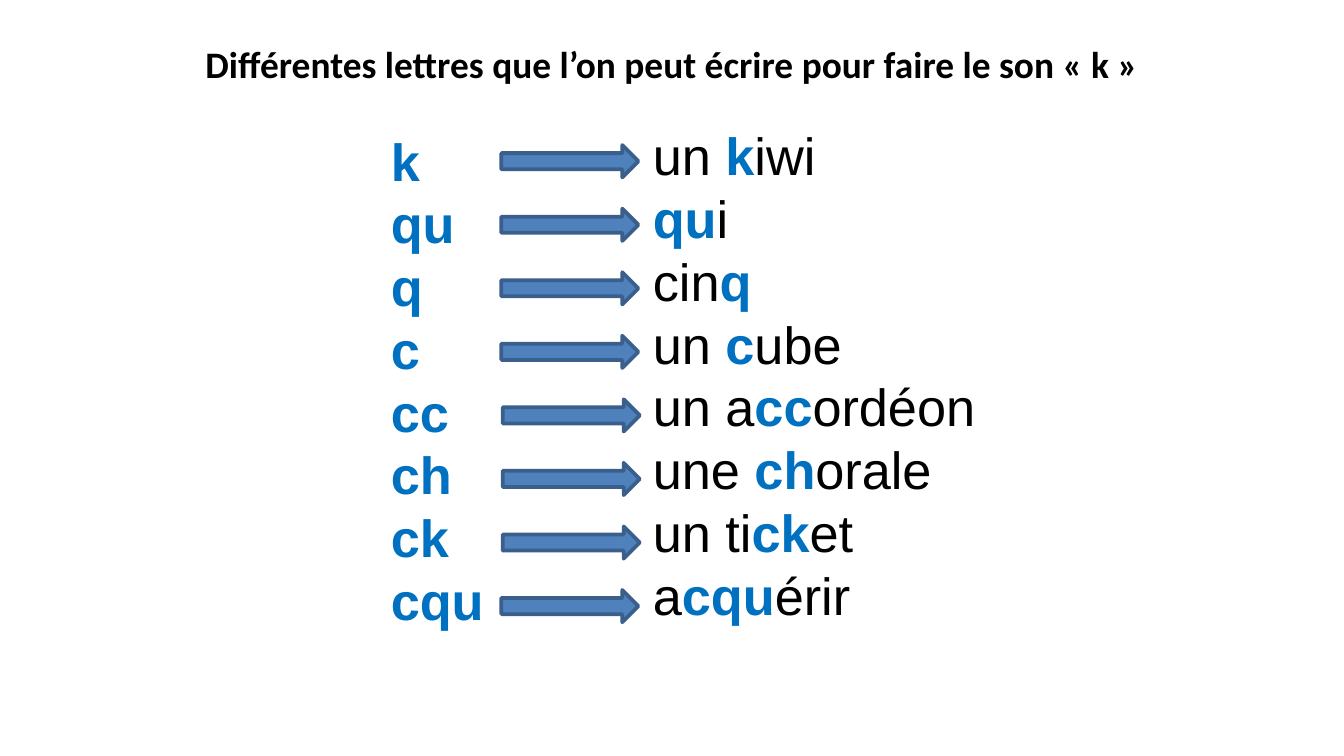
from pptx import Presentation
from pptx.dml.color import RGBColor
from pptx.enum.shapes import MSO_SHAPE
from pptx.enum.text import MSO_ANCHOR, PP_ALIGN
from pptx.util import Inches, Pt

BLACK = RGBColor(0x00, 0x00, 0x00)
LETTER_BLUE = RGBColor(0x00, 0x70, 0xC0)
ARROW_FILL = RGBColor(0x4F, 0x81, 0xBD)
ARROW_LINE = RGBColor(0x3A, 0x5F, 0x8C)

TITLE = "Différentes lettres que l’on peut écrire pour faire le son « k »"
SPELLINGS = [
    ("k", "un kiwi"),
    ("qu", "qui"),
    ("q", "cinq"),
    ("c", "un cube"),
    ("cc", "un accordéon"),
    ("ch", "une chorale"),
    ("ck", "un ticket"),
    ("cqu", "acquérir"),
]
FIRST_ARROW_TOP = 1.08
LAST_ARROW_TOP = 4.39
ARROW_PITCH = (LAST_ARROW_TOP - FIRST_ARROW_TOP) / (len(SPELLINGS) - 1)


class SpellingSlide:
    title = {"name": "Calibri", "size": Pt(20), "bold": True}
    plain = {"name": "Arial", "size": Pt(28), "bold": False}
    letters = {"name": "Arial", "size": Pt(28), "bold": True}

    def __init__(self, presentation):
        self.slide = presentation.slides.add_slide(presentation.slide_layouts[6])

    def add_text(self, box, lines, alignment=PP_ALIGN.LEFT, anchor=MSO_ANCHOR.TOP):
        shape = self.slide.shapes.add_textbox(*map(Inches, box))
        text_frame = shape.text_frame
        text_frame.word_wrap = True
        text_frame.vertical_anchor = anchor
        for index, line in enumerate(lines):
            paragraph = text_frame.add_paragraph() if index else text_frame.paragraphs[0]
            paragraph.alignment = alignment
            for text, style, color in line:
                if text:
                    self.add_run(paragraph, text, style, color)

    def add_run(self, paragraph, text, style, color):
        run = paragraph.add_run()
        run.text = text
        for name, value in style.items():
            setattr(run.font, name, value)
        run.font.color.rgb = color

    def add_arrow(self, left, top, width, height):
        box = map(Inches, (left, top, width, height))
        shape = self.slide.shapes.add_shape(MSO_SHAPE.RIGHT_ARROW, *box)
        shape.shadow.inherit = False
        shape.fill.solid()
        shape.fill.fore_color.rgb = ARROW_FILL
        shape.line.color.rgb = ARROW_LINE
        shape.line.width = Pt(2)


def split_word(letters, word):
    before, match, after = word.partition(letters)
    return [
        (before, SpellingSlide.plain, BLACK),
        (match, SpellingSlide.letters, LETTER_BLUE),
        (after, SpellingSlide.plain, BLACK),
    ]


def main():
    presentation = Presentation()
    presentation.slide_width = Inches(10)
    presentation.slide_height = Inches(10 * 9 / 16)

    page = SpellingSlide(presentation)
    page.add_text((2.81, 0.91, 1.24, 3.87),
                  [[(letters, page.letters, LETTER_BLUE)] for letters, _ in SPELLINGS])
    page.add_text((0.5, 0.23, 9, 0.48), [[(TITLE, page.title, BLACK)]],
                  PP_ALIGN.CENTER, MSO_ANCHOR.MIDDLE)
    page.add_text((4.76, 0.87, 3.7, 3.87),
                  [split_word(letters, word) for letters, word in SPELLINGS])
    for row in range(len(SPELLINGS)):
        left = 3.74 if 4 <= row <= 6 else 3.73
        page.add_arrow(left, FIRST_ARROW_TOP + row * ARROW_PITCH, 1.02, 0.24)

    presentation.save("out.pptx")


if __name__ == "__main__":
    main()
